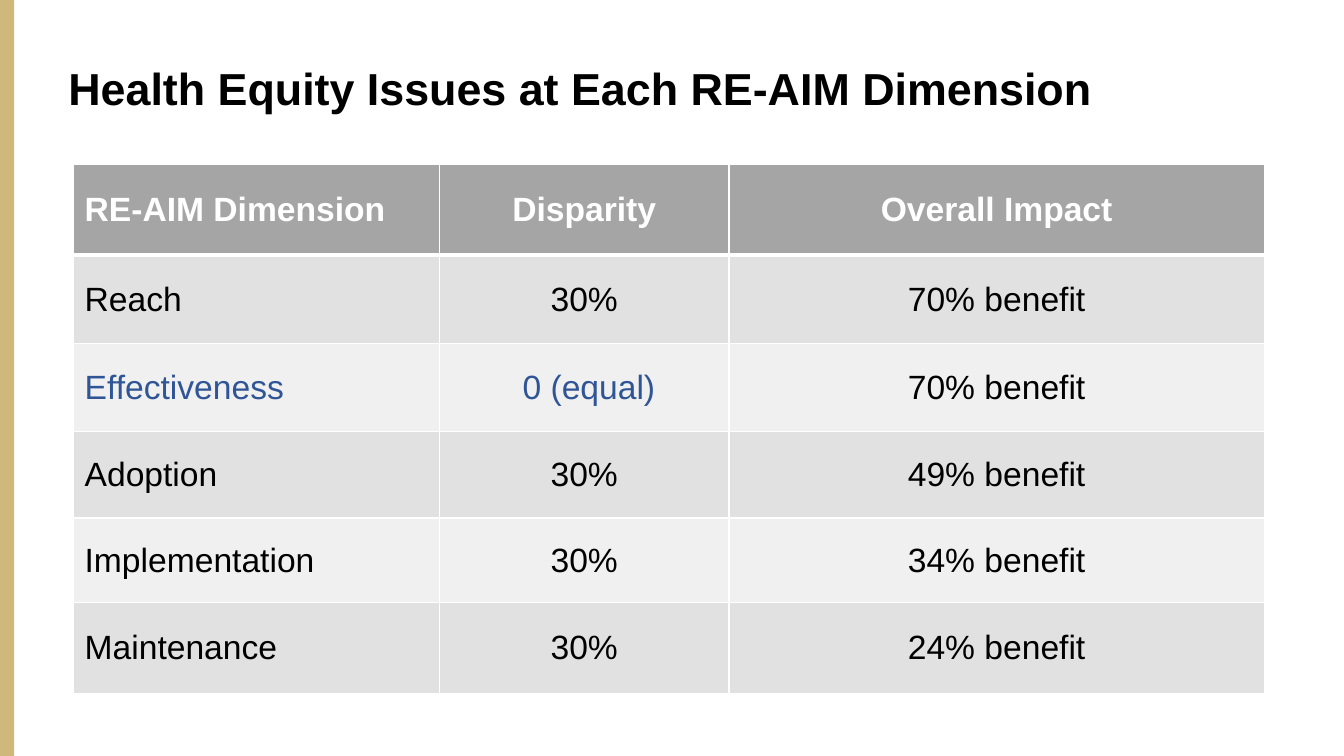
import pptx
import pptx.util
import pptx.dml.color
import pptx.enum.shapes
import pptx.enum.text
import pptx.oxml
import pptx.oxml.ns

PX = 9144
ALIGN = pptx.enum.text.PP_ALIGN
MIDDLE = pptx.enum.text.MSO_ANCHOR.MIDDLE

WIDTHS = [363, 287, 531]
HEIGHTS = [90, 88, 87, 86, 84, 90]
ROWS = [
    ["RE-AIM Dimension", "Disparity", "Overall Impact"],
    ["Reach", "30%", "70% benefit"],
    ["Effectiveness", " 0 (equal)", "70% benefit"],
    ["Adoption", "30%", "49% benefit"],
    ["Implementation", "30%", "34% benefit"],
    ["Maintenance", "30%", "24% benefit"],
]
BLUE = {(2, 0), (2, 1)}


def color(text):
    return pptx.dml.color.RGBColor.from_string(text)


class Deck:
    """Draws styled elements on the current slide."""

    def __init__(self, font, wide, high):
        self.font = font
        self.prs = pptx.Presentation()
        self.prs.slide_width = wide * PX
        self.prs.slide_height = high * PX
        self.slide = self.prs.slides.add_slide(self.prs.slide_layouts[6])

    def label(self, frame, text, size, ink, bold=False, align=ALIGN.LEFT):
        frame.text = text
        para = frame.paragraphs[0]
        para.alignment = align
        para.font.name = self.font
        para.font.size = pptx.util.Pt(size)
        para.font.bold = bold
        para.font.color.rgb = color(ink)
        return para

    def title(self, left, top, wide, high, text):
        box = self.slide.shapes.add_textbox(left * PX, top * PX, wide * PX, high * PX)
        frame = box.text_frame
        frame.word_wrap = True
        frame.vertical_anchor = MIDDLE
        self.label(frame, text, 32, "000000", True).line_spacing = 0.9

    def bar(self, left, top, wide, high, fill):
        kind = pptx.enum.shapes.MSO_SHAPE.RECTANGLE
        bar = self.slide.shapes.add_shape(kind, left * PX, top * PX, wide * PX, high * PX)
        bar.shadow.inherit = False
        bar.fill.solid()
        bar.fill.fore_color.rgb = color(fill)
        bar.line.fill.background()

    def border(self, cell, row):
        props = cell._tc.get_or_add_tcPr()
        thick = {"T": 3 if row == 1 else 1, "B": 3 if row == 0 else 1}
        for spot, side in enumerate("LRTB"):
            line = pptx.oxml.parse_xml(
                f'<a:ln{side} {pptx.oxml.ns.nsdecls("a")} w="{thick.get(side, 1) * 12700}">'
                f'<a:solidFill><a:srgbClr val="FFFFFF"/></a:solidFill></a:ln{side}>')
            props.insert(spot, line)

    def table(self, left, top, wides, highs, rows, blue):
        frame = self.slide.shapes.add_table(
            len(rows), len(wides), left * PX, top * PX, sum(wides) * PX, sum(highs) * PX)
        grid = frame.table
        for col, wide in zip(grid.columns, wides):
            col.width = wide * PX
        for r, (texts, high) in enumerate(zip(rows, highs)):
            grid.rows[r].height = high * PX
            head = r == 0
            fill = "A5A5A5" if head else "E1E1E1" if r % 2 else "F0F0F0"
            for c, text in enumerate(texts):
                cell = grid.cell(r, c)
                cell.vertical_anchor = MIDDLE
                cell.margin_left = cell.margin_right = 11 * PX
                cell.margin_top = cell.margin_bottom = 5 * PX
                cell.fill.solid()
                cell.fill.fore_color.rgb = color(fill)
                ink = "FFFFFF" if head else "2F5597" if (r, c) in blue else "000000"
                align = ALIGN.CENTER if c else ALIGN.LEFT
                self.label(cell.text_frame, text, 24, ink, head, align)
                self.border(cell, r)


def main():
    deck = Deck("Arial", 1333, 750)
    deck.title(58, 18, 1254, 145, "Health Equity Issues at Each RE-AIM Dimension")
    deck.bar(0, 0, 14, 750, "CFB87C")
    deck.table(73, 163, WIDTHS, HEIGHTS, ROWS, BLUE)
    deck.prs.save("out.pptx")


if __name__ == "__main__":
    main()
